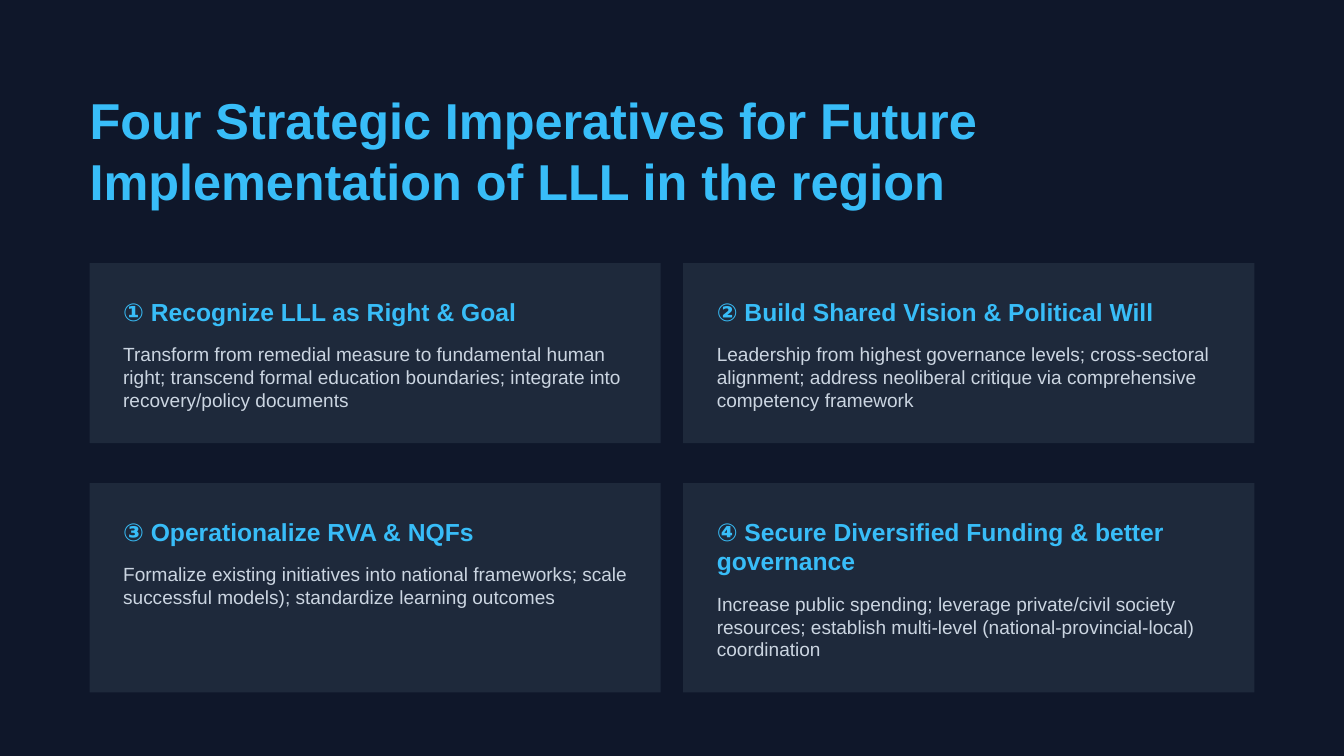
from pptx import Presentation
from pptx.dml.color import RGBColor
from pptx.enum.shapes import MSO_SHAPE
from pptx.util import Pt

TITLE = "Four Strategic Imperatives for Future Implementation of LLL in the region"
# Each row: top, height, cards; each card: heading, heading line count, body
ROWS = [
    (141, 96.5, [
        ("① Recognize LLL as Right & Goal", 1,
         "Transform from remedial measure to fundamental human right; "
         "transcend formal education boundaries; integrate into recovery/policy documents"),
        ("② Build Shared Vision & Political Will", 1,
         "Leadership from highest governance levels; cross-sectoral alignment; "
         "address neoliberal critique via comprehensive competency framework"),
    ]),
    (258.8, 112.2, [
        ("③ Operationalize RVA & NQFs", 1,
         "Formalize existing initiatives into national frameworks; "
         "scale successful models); standardize learning outcomes"),
        ("④ Secure Diversified Funding & better governance", 2,
         "Increase public spending; leverage private/civil society resources; "
         "establish multi-level (national-provincial-local) coordination"),
    ]),
]
COLORS = {"background": "0F172A", "card": "1E293B", "accent": "38BDF8", "body": "CBD5E1"}
FONT = "Arial"
SLIDE_W, SLIDE_H = 720, 405
MARGIN, GAP, PAD = 48, 12, 18
CONTENT_W = SLIDE_W - 2 * MARGIN
CARD_W = (CONTENT_W - GAP) / 2
HEADING_LINE, BODY_LINE = 15.8, 12.2
HEADING_GAP = 9


def rgb(name):
    return RGBColor.from_string(COLORS[name])


def add_text(s, text, x, y, w, h, size, line, color, bold=False):
    tf = s.shapes.add_textbox(Pt(x), Pt(y), Pt(w), Pt(h)).text_frame
    tf.margin_left = tf.margin_top = tf.margin_right = tf.margin_bottom = 0
    tf.word_wrap = True
    p = tf.paragraphs[0]
    p.text = text
    p.line_spacing = Pt(line)
    font = p.runs[0].font
    font.name, font.size, font.bold = FONT, Pt(size), bold
    font.color.rgb = rgb(color)


def add_card(s, x, y, h, heading, lines, body):
    sp = s.shapes.add_shape(MSO_SHAPE.RECTANGLE, Pt(x), Pt(y), Pt(CARD_W), Pt(h))
    sp.shadow.inherit = False
    sp.fill.solid()
    sp.fill.fore_color.rgb = rgb("card")
    sp.line.fill.background()

    x, y, w = x + PAD, y + PAD, CARD_W - 2 * PAD
    heading_h = lines * HEADING_LINE
    add_text(s, heading, x, y, w, heading_h + 2.9, 13.2, HEADING_LINE, "accent", bold=True)
    add_text(s, body, x, y + heading_h + HEADING_GAP, w, 36, 10.2, BODY_LINE, "body")


def main():
    prs = Presentation()
    prs.slide_width, prs.slide_height = Pt(SLIDE_W), Pt(SLIDE_H)
    s = prs.slides.add_slide(prs.slide_layouts[6])
    s.background.fill.solid()
    s.background.fill.fore_color.rgb = rgb("background")

    add_text(s, TITLE, MARGIN, 48, CONTENT_W, 63.4, 27, 32.4, "accent", bold=True)
    for top, height, cards in ROWS:
        for col, card in enumerate(cards):
            add_card(s, MARGIN + col * (CARD_W + GAP), top, height, *card)
    prs.save("out.pptx")


if __name__ == "__main__":
    main()
